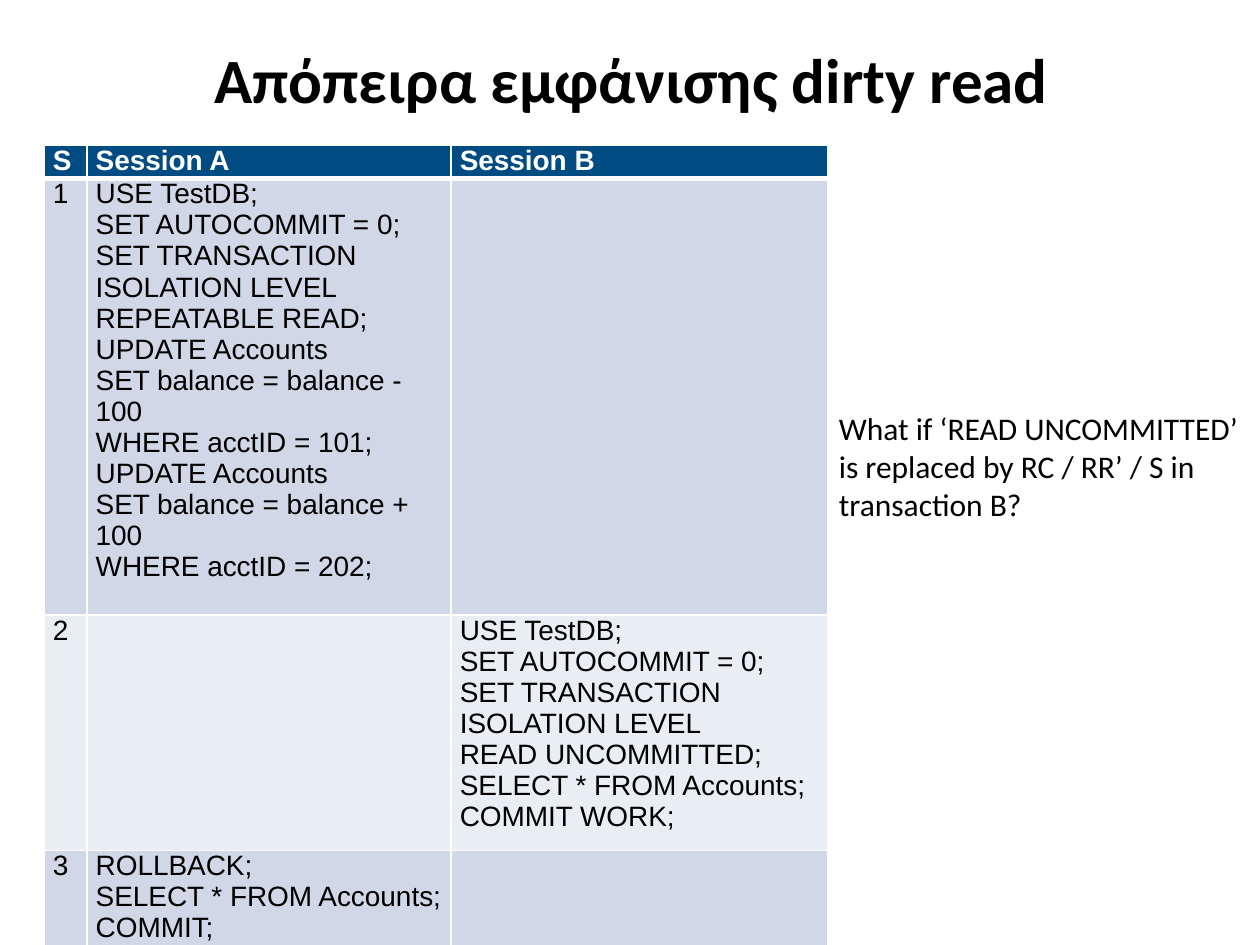
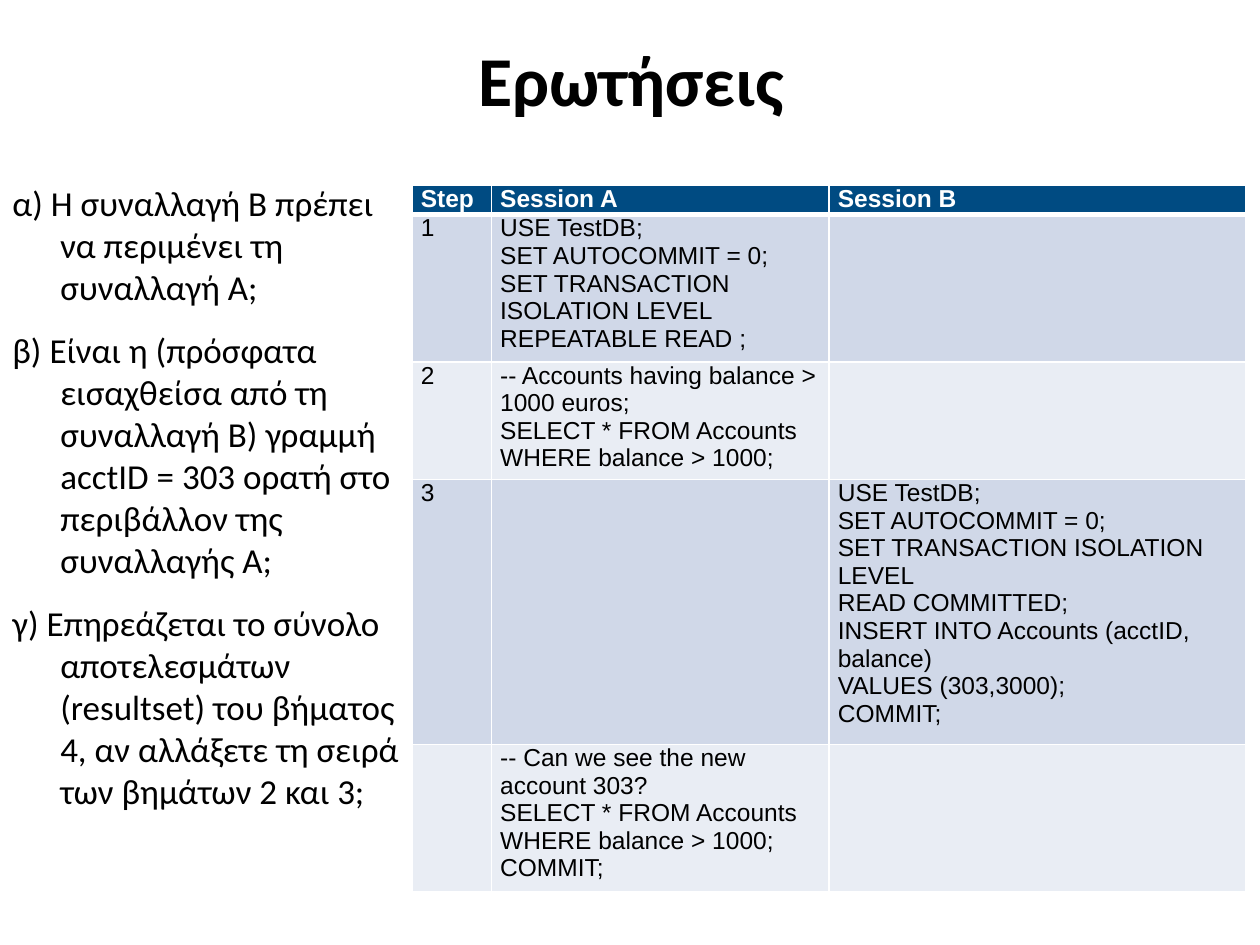
import lxml.etree
import pptx
import pptx.dml.color
import pptx.enum.text
import pptx.oxml.ns
import pptx.util

Inches = pptx.util.Inches
Pt = pptx.util.Pt
ALIGN = pptx.enum.text.PP_ALIGN

BLACK, WHITE = "000000", "FFFFFF"
HEADER_FILL = "004B82"
BAND_FILLS = ("D0D8E8", "E9EDF4")
TITLE_BOX = (0.51, 0.13, 9, 0.99)

SESSION_START = ["USE TestDB;", "SET AUTOCOMMIT = 0;", "SET TRANSACTION ISOLATION LEVEL"]
RICH_ACCOUNTS = ["SELECT * FROM Accounts", "WHERE balance > 1000;"]

# Each step: step label, lines of session A, lines of session B
DIRTY_READ = {
    "title": ("Απόπειρα εμφάνισης dirty read", 36),
    "table": {
        "at": (0.35, 1.15),
        "columns": (0.34, 2.89, 2.99),
        "row_heights": (0.24, 3.2, 1.73, 0.98),
        "size": 16,
        "header": ("S", "Session A", "Session B"),
        "steps": [
            ("1", SESSION_START + [
                "REPEATABLE READ;",
                "UPDATE Accounts",
                "SET balance = balance - 100",
                "WHERE acctID = 101;",
                "UPDATE Accounts",
                "SET balance = balance + 100",
                "WHERE acctID = 202;",
            ], []),
            ("2", [], SESSION_START + [
                "READ UNCOMMITTED;", "SELECT * FROM Accounts;", "COMMIT WORK;",
            ]),
            ("3", ["ROLLBACK;", "SELECT * FROM Accounts;", "COMMIT;"], []),
        ],
    },
    "remark": "What if ‘READ UNCOMMITTED’ is replaced by RC / RR’ / S in transaction B?",
}

QUESTIONS = {
    "title": ("Ερωτήσεις", 40),
    "questions": [
        "α) Η συναλλαγή Β πρέπει να περιμένει τη συναλλαγή A;",
        "β) Είναι η (πρόσφατα εισαχθείσα από τη συναλλαγή Β) γραμμή "
        "acctID = 303 ορατή στο περιβάλλον της συναλλαγής Α;",
        "γ) Επηρεάζεται το σύνολο αποτελεσμάτων (resultset) του βήματος 4, "
        "αν αλλάξετε τη σειρά των βημάτων 2 και 3;",
    ],
    "table": {
        "at": (3.27, 1.47),
        "columns": (0.63, 2.68, 3.31),
        "row_heights": (0.16, 1, 0.83, 1.84, 1.04),
        "size": 14,
        "header": ("Step", "Session A", "Session B"),
        "steps": [
            ("1", SESSION_START + ["REPEATABLE READ ;"], []),
            ("2", ["-- Accounts having balance > 1000 euros;"] + RICH_ACCOUNTS, []),
            ("3", [], SESSION_START + [
                "READ COMMITTED;",
                "INSERT INTO Accounts (acctID, balance)",
                "VALUES (303,3000);",
                "COMMIT;",
            ]),
            ("", ["-- Can we see the new account 303?"] + RICH_ACCOUNTS + ["COMMIT;"], []),
        ],
    },
}


def rgb(color):
    return pptx.dml.color.RGBColor.from_string(color)


def write(frame, lines, size, font="Calibri", color=BLACK, bold=False, align=ALIGN.LEFT):
    """Put one paragraph per line into the frame and return the paragraphs."""
    frame.word_wrap = True
    frame.text = "\n".join(lines)
    for paragraph in frame.paragraphs:
        paragraph.alignment = align
        paragraph.font.name = font
        paragraph.font.size = Pt(size)
        paragraph.font.bold = bold
        paragraph.font.color.rgb = rgb(color)
    return frame.paragraphs


def add_text(slide, box, lines, size, **style):
    frame = slide.shapes.add_textbox(*map(Inches, box)).text_frame
    return frame, write(frame, lines, size, **style)


def add_title(slide, text, size):
    frame, _ = add_text(slide, TITLE_BOX, [text], size, bold=True, align=ALIGN.CENTER)
    frame.vertical_anchor = pptx.enum.text.MSO_ANCHOR.MIDDLE


def set_borders(cell, **widths):
    """Draw white borders; widths in points for L, R, T and B."""
    properties = cell._tc.get_or_add_tcPr()
    qn = pptx.oxml.ns.qn
    for side in "LRTB":
        line = lxml.etree.SubElement(
            properties, qn(f"a:ln{side}"), w=str(Pt(widths.get(side, 1))))
        fill = lxml.etree.SubElement(line, qn("a:solidFill"))
        lxml.etree.SubElement(fill, qn("a:srgbClr"), val=WHITE)


def add_session_table(slide, at, columns, row_heights, size, header, steps):
    rows = [[[label] for label in header]]
    rows += [([step], session_a, session_b) for step, session_a, session_b in steps]
    left, top = at
    table = slide.shapes.add_table(
        len(rows), len(columns), Inches(left), Inches(top),
        Inches(sum(columns)), Inches(sum(row_heights))).table
    for column, width in zip(table.columns, columns):
        column.width = Inches(width)
    for r, (row, height) in enumerate(zip(rows, row_heights)):
        table.rows[r].height = Inches(height)
        is_header = r == 0
        for c, lines in enumerate(row):
            cell = table.cell(r, c)
            cell.margin_left = cell.margin_right = Inches(0.07)
            cell.margin_top = cell.margin_bottom = 0
            set_borders(cell, B=3 if is_header else 1, T=3 if r == 1 else 1)
            cell.fill.solid()
            cell.fill.fore_color.rgb = rgb(HEADER_FILL if is_header else BAND_FILLS[(r - 1) % 2])
            paragraphs = write(cell.text_frame, lines, size, font="Arial",
                               color=WHITE if is_header else BLACK, bold=is_header)
            if not is_header:
                paragraphs[-1].alignment = ALIGN.JUSTIFY


def add_questions(slide, questions):
    _, paragraphs = add_text(slide, (0, 1.39, 3.35, 5.43), questions, 20)
    for paragraph in paragraphs:
        paragraph.space_before = paragraph.space_after = Pt(6)
        indent = paragraph._p.get_or_add_pPr()
        indent.set("marL", str(Inches(0.38)))
        indent.set("indent", str(-Inches(0.38)))


def main():
    deck = pptx.Presentation()
    deck.slide_width, deck.slide_height = Inches(10), Inches(7.5)
    for content in (DIRTY_READ, QUESTIONS):
        slide = deck.slides.add_slide(deck.slide_layouts[6])
        add_title(slide, *content["title"])
        if "questions" in content:
            add_questions(slide, content["questions"])
        add_session_table(slide, **content["table"])
        if "remark" in content:
            add_text(slide, (6.56, 3.2, 3.46, 1.01), [content["remark"]], 18)
    deck.save("out.pptx")


if __name__ == "__main__":
    main()
